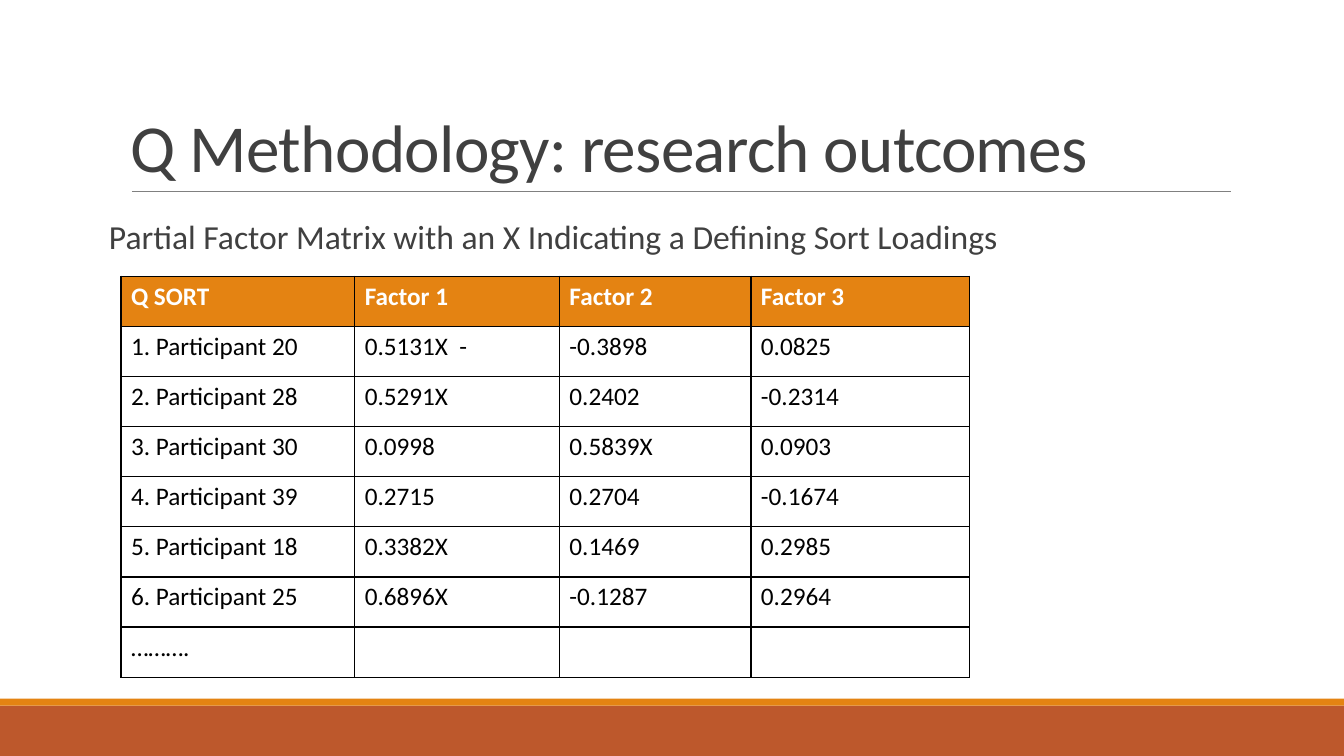
from lxml.etree import SubElement
from pptx import Presentation
from pptx.dml.color import RGBColor
from pptx.enum.shapes import MSO_CONNECTOR, MSO_SHAPE
from pptx.enum.text import MSO_ANCHOR
from pptx.oxml.ns import qn
from pptx.util import Pt

TITLE = "Q Methodology: research outcomes"
CAPTION = "Partial Factor Matrix with an X Indicating a Defining Sort Loadings"
LOADINGS = [
    ("Q SORT", "Factor 1", "Factor 2", "Factor 3"),
    ("1. Participant 20", "0.5131X  -", "-0.3898", "0.0825"),
    ("2. Participant 28", "0.5291X", "0.2402", "-0.2314"),
    ("3. Participant 30", "0.0998", "0.5839X", "0.0903"),
    ("4. Participant 39", "0.2715", "0.2704", "-0.1674"),
    ("5. Participant 18", "0.3382X", "0.1469", "0.2985"),
    ("6. Participant 25", "0.6896X", "-0.1287", "0.2964"),
    ("……….", "", "", ""),
]
COLUMN_WIDTHS = (167, 146.2, 136.8, 156.2)
ROW_HEIGHT = 35.82

FONT = "Calibri"
WHITE = RGBColor(0xFF, 0xFF, 0xFF)
BLACK = RGBColor(0, 0, 0)
DARK_GREY = RGBColor(0x40, 0x40, 0x40)
RULE_GREY = RGBColor(0x80, 0x80, 0x80)
ORANGE = RGBColor(0xE4, 0x83, 0x12)
RUST = RGBColor(0xBD, 0x58, 0x2C)

SLIDE_WIDTH, SLIDE_HEIGHT = 960, 540
FOOTER_TOP, STRIPE_HEIGHT = 504, 5
RULE_LEFT, RULE_RIGHT, RULE_TOP = 94.3, 879, 136.8


def add_band(slide, top, height, color):
    band = slide.shapes.add_shape(
        MSO_SHAPE.RECTANGLE, 0, Pt(top), Pt(SLIDE_WIDTH), Pt(height))
    band.shadow.inherit = False
    band.fill.solid()
    band.fill.fore_color.rgb = color
    band.line.fill.background()


def add_run(paragraph, text, size, color, bold=False):
    run = paragraph.add_run()
    run.text = text
    run.font.name = FONT
    run.font.size = Pt(size)
    run.font.bold = bold
    run.font.color.rgb = color
    return run


def add_text(slide, box, text, size, line_spacing):
    """Add a one-paragraph text box; return its frame, paragraph and run."""
    frame = slide.shapes.add_textbox(*map(Pt, box)).text_frame
    frame.word_wrap = True
    paragraph = frame.paragraphs[0]
    paragraph.line_spacing = line_spacing
    return frame, paragraph, add_run(paragraph, text, size, DARK_GREY)


def add_borders(cell):
    properties = cell._tc.get_or_add_tcPr()
    for side in ("lnL", "lnR", "lnT", "lnB"):
        line = SubElement(properties, qn(f"a:{side}"), w=str(Pt(1)))
        fill = SubElement(line, qn("a:solidFill"))
        SubElement(fill, qn("a:srgbClr"), val=str(BLACK))


def add_loadings_table(slide, left, top):
    table = slide.shapes.add_table(
        len(LOADINGS), len(COLUMN_WIDTHS), Pt(left), Pt(top),
        Pt(sum(COLUMN_WIDTHS)), Pt(ROW_HEIGHT * len(LOADINGS))).table
    table.horz_banding = False
    for column, width in zip(table.columns, COLUMN_WIDTHS):
        column.width = Pt(width)
    for row_index, values in enumerate(LOADINGS):
        table.rows[row_index].height = Pt(ROW_HEIGHT)
        is_header = row_index == 0
        for column_index, value in enumerate(values):
            cell = table.cell(row_index, column_index)
            add_borders(cell)
            if is_header:
                cell.fill.solid()
                cell.fill.fore_color.rgb = ORANGE
            else:
                cell.fill.background()
            if value:
                add_run(cell.text_frame.paragraphs[0], value, 18,
                        WHITE if is_header else BLACK, is_header)


def main():
    presentation = Presentation()
    presentation.slide_width = Pt(SLIDE_WIDTH)
    presentation.slide_height = Pt(SLIDE_HEIGHT)
    slide = presentation.slides.add_slide(presentation.slide_layouts[6])

    add_band(slide, FOOTER_TOP, SLIDE_HEIGHT - FOOTER_TOP, RUST)
    add_band(slide, FOOTER_TOP - STRIPE_HEIGHT, STRIPE_HEIGHT, ORANGE)
    rule = slide.shapes.add_connector(
        MSO_CONNECTOR.STRAIGHT,
        Pt(RULE_LEFT), Pt(RULE_TOP), Pt(RULE_RIGHT), Pt(RULE_TOP))
    rule.line.color.rgb = RULE_GREY
    rule.line.width = Pt(0.5)
    SubElement(rule._element.spPr, qn("a:effectLst"))

    frame, _, run = add_text(slide, (86.4, 22.3, 792, 114.5), TITLE, 48, 0.85)
    frame.vertical_anchor = MSO_ANCHOR.BOTTOM
    run.font._element.set("spc", "-50")

    frame, paragraph, _ = add_text(
        slide, (77.8, 154.1, 808.6, 337.7), CAPTION, 24, 0.9)
    frame.margin_left = frame.margin_right = 0
    paragraph.space_before = Pt(12)
    paragraph.space_after = Pt(2)

    add_loadings_table(slide, 86.4, 197.3)
    presentation.save("out.pptx")


if __name__ == "__main__":
    main()
